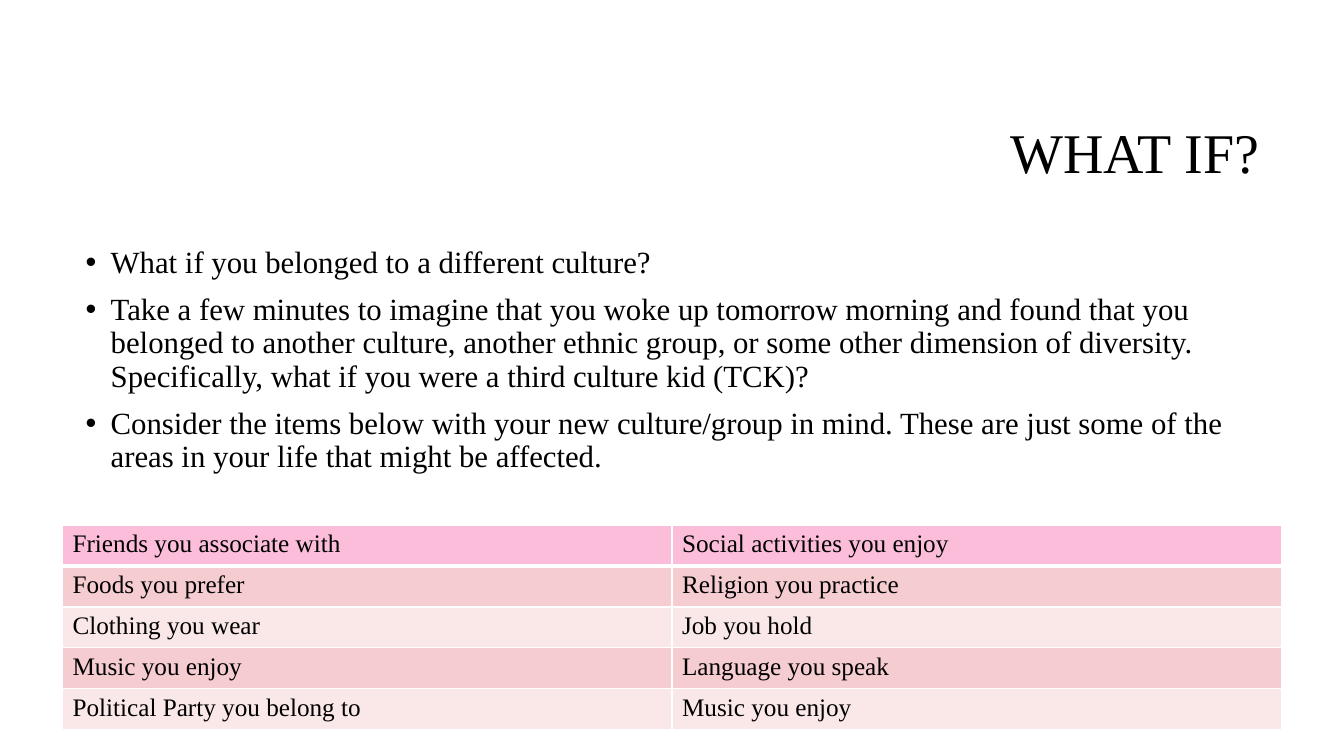
"""Build the "What if?" slide: a title, a bulleted text and a table of life areas."""
from dataclasses import dataclass

from lxml import etree
from pptx import Presentation
from pptx.dml.color import RGBColor
from pptx.enum.text import MSO_ANCHOR, PP_ALIGN
from pptx.oxml.ns import qn
from pptx.util import Inches, Pt

FONT = "Times New Roman"
COLORS = {
    "text": "000000",
    "border": "FFFFFF",
    "header": "FCBDDB",
    "odd": "F5CDD0",
    "even": "FAE8E9",
}
BULLETS = [
    "What if you belonged to a different culture?",
    "Take a few minutes to imagine that you woke up tomorrow morning and found that you "
    "belonged to another culture, another ethnic group, or some other dimension of diversity. "
    "Specifically, what if you were a third culture kid (TCK)?",
    "Consider the items below with your new culture/group in mind. These are just some of the "
    "areas in your life that might be affected.",
]
AREAS = [
    ("Friends you associate with", "Social activities you enjoy"),
    ("Foods you prefer", "Religion you practice"),
    ("Clothing you wear", "Job you hold"),
    ("Music you enjoy", "Language you speak"),
    ("Political Party you belong to", "Music you enjoy"),
]


@dataclass
class TextBlock:
    left: float
    top: float
    width: float
    height: float
    size: int
    paragraphs: list[str]
    align: PP_ALIGN = PP_ALIGN.LEFT
    anchor: MSO_ANCHOR = MSO_ANCHOR.TOP
    bulleted: bool = False


BLOCKS = [
    TextBlock(3.17, 0.84, 9.42, 1.41, 40, ["WHAT IF?"], PP_ALIGN.RIGHT, MSO_ANCHOR.MIDDLE),
    TextBlock(0.75, 2.4, 11.83, 4.4, 22, BULLETS, bulleted=True),
]


def add_run(p, text: str, size: int) -> None:
    r = p.add_run()
    r.text = text
    r.font.name = FONT
    r.font.size = Pt(size)
    r.font.bold = False
    r.font.color.rgb = RGBColor.from_string(COLORS["text"])


def add_bullet(p) -> None:
    pPr = p._p.get_or_add_pPr()
    pPr.set("marL", str(Inches(0.25)))
    pPr.set("indent", str(Inches(-0.25)))
    etree.SubElement(pPr, qn("a:buFont"), typeface="Arial")
    etree.SubElement(pPr, qn("a:buChar"), char="•")


def add_block(s, block: TextBlock) -> None:
    sp = s.shapes.add_textbox(*map(Inches, (block.left, block.top, block.width, block.height)))
    tf = sp.text_frame
    tf.word_wrap = True
    tf.vertical_anchor = block.anchor
    for i, text in enumerate(block.paragraphs):
        p = tf.add_paragraph() if i else tf.paragraphs[0]
        if block.bulleted:
            add_bullet(p)
        p.alignment = block.align
        p.line_spacing = 0.9
        if i:
            p.space_before = Pt(10)
        add_run(p, text, block.size)


def set_borders(cell, widths: dict[str, int]) -> None:
    tcPr = cell._tc.get_or_add_tcPr()
    for i, (side, width) in enumerate(widths.items()):
        ln = etree.Element(qn(f"a:ln{side}"), w=str(Pt(width)))
        fill = etree.SubElement(ln, qn("a:solidFill"))
        etree.SubElement(fill, qn("a:srgbClr"), val=COLORS["border"])
        tcPr.insert(i, ln)


def add_areas(s) -> None:
    table = s.shapes.add_table(
        len(AREAS), 2, Inches(0.62), Inches(5.21), Inches(12.09), Inches(2.03)
    ).table
    for i, row in enumerate(AREAS):
        color = "header" if i == 0 else "odd" if i % 2 else "even"
        for j, text in enumerate(row):
            cell = table.cell(i, j)
            cell.fill.solid()
            cell.fill.fore_color.rgb = RGBColor.from_string(COLORS[color])
            set_borders(cell, {"L": 1, "R": 1, "T": 3 if i == 1 else 1, "B": 1 if i else 3})
            add_run(cell.text_frame.paragraphs[0], text, 18)


def main() -> None:
    prs = Presentation()
    prs.slide_width, prs.slide_height = Inches(13.33), Inches(7.5)
    s = prs.slides.add_slide(prs.slide_layouts[6])
    for block in BLOCKS:
        add_block(s, block)
    add_areas(s)
    prs.save("out.pptx")


if __name__ == "__main__":
    main()
